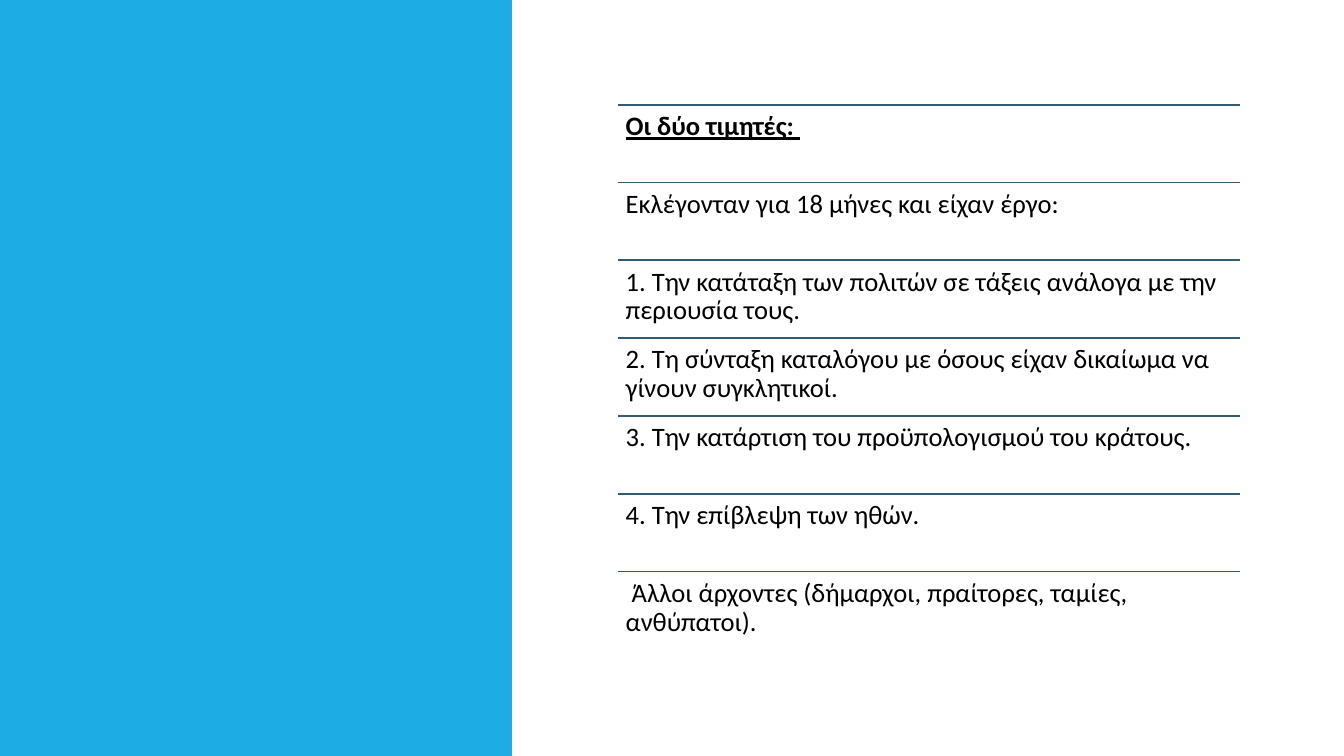
from lxml.etree import SubElement
from pptx import Presentation
from pptx.dml.color import RGBColor
from pptx.enum.shapes import MSO_CONNECTOR as Connector, MSO_SHAPE as Shape
from pptx.enum.text import MSO_ANCHOR as Anchor, PP_ALIGN as Align
from pptx.oxml.ns import qn
from pptx.util import Cm, Pt

HEADING = "Οι δύο τιμητές: "
DUTIES = [
    "Εκλέγονταν για 18 μήνες και είχαν έργο:",
    "1. Την κατάταξη των πολιτών σε τάξεις ανάλογα με την περιουσία τους.",
    "2. Τη σύνταξη καταλόγου με όσους είχαν δικαίωμα να γίνουν συγκλητικοί.",
    "3. Την κατάρτιση του προϋπολογισμού του κράτους.",
    "4. Την επίβλεψη των ηθών.",
    " Άλλοι άρχοντες (δήμαρχοι, πραίτορες, ταμίες, ανθύπατοι).",
]
COLORS = {"panel": "1CADE4", "rule": "335B74", "text": "000000"}
FONT = "Calibri"
SLIDE_WIDTH, SLIDE_HEIGHT = Cm(33.87), Cm(19.05)
PANEL_WIDTH = Cm(12.9)
LIST_LEFT, LIST_TOP, LIST_WIDTH = Cm(15.57), Cm(2.64), Cm(15.67)
ROW_HEIGHT, INSET = Cm(1.96), Cm(0.2)


def color(part):
    return RGBColor.from_string(COLORS[part])


def add_panel(slide):
    panel = slide.shapes.add_shape(Shape.RECTANGLE, 0, 0, PANEL_WIDTH, SLIDE_HEIGHT)
    panel.shadow.inherit = False
    panel.fill.solid()
    panel.fill.fore_color.rgb = color("panel")
    panel.line.fill.background()


def add_rule(slide, top):
    rule = slide.shapes.add_connector(
        Connector.STRAIGHT, LIST_LEFT, top, LIST_LEFT + LIST_WIDTH, top)
    rule.line.color.rgb = color("rule")
    rule.line.width = Pt(1.25)
    SubElement(rule._element.spPr, qn("a:effectLst"))


def add_text(slide, text, top, size=19, bold=False, underline=False):
    row = slide.shapes.add_textbox(LIST_LEFT, top, LIST_WIDTH, ROW_HEIGHT)
    frame = row.text_frame
    frame.word_wrap = True
    frame.vertical_anchor = Anchor.TOP
    frame.margin_left = frame.margin_right = INSET
    frame.margin_top = frame.margin_bottom = INSET
    paragraph = frame.paragraphs[0]
    paragraph.alignment = Align.LEFT
    paragraph.line_spacing = 0.9
    run = paragraph.add_run()
    run.text = text
    run.font.name = FONT
    run.font.size = Pt(size)
    run.font.bold = bold
    run.font.underline = underline
    run.font.color.rgb = color("text")


def main():
    """Build the slide on the two censors and save it."""
    deck = Presentation()
    deck.slide_width, deck.slide_height = SLIDE_WIDTH, SLIDE_HEIGHT
    slide = deck.slides.add_slide(deck.slide_layouts[6])
    add_panel(slide)
    for index, text in enumerate([HEADING, *DUTIES]):
        top = LIST_TOP + index * ROW_HEIGHT
        is_heading = index == 0
        add_rule(slide, top)
        add_text(slide, text, top, bold=is_heading, underline=is_heading)
    deck.save("out.pptx")


if __name__ == "__main__":
    main()
